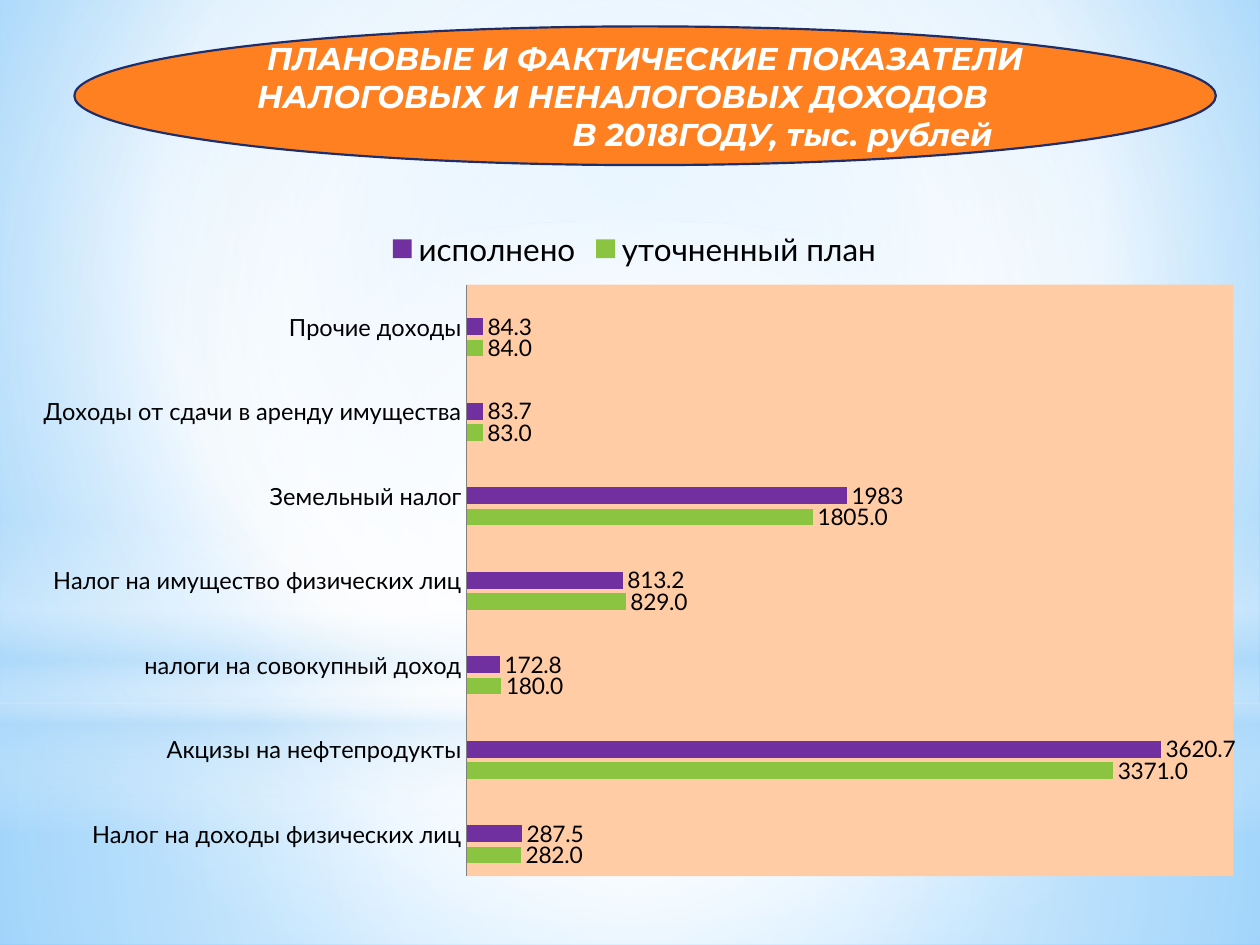
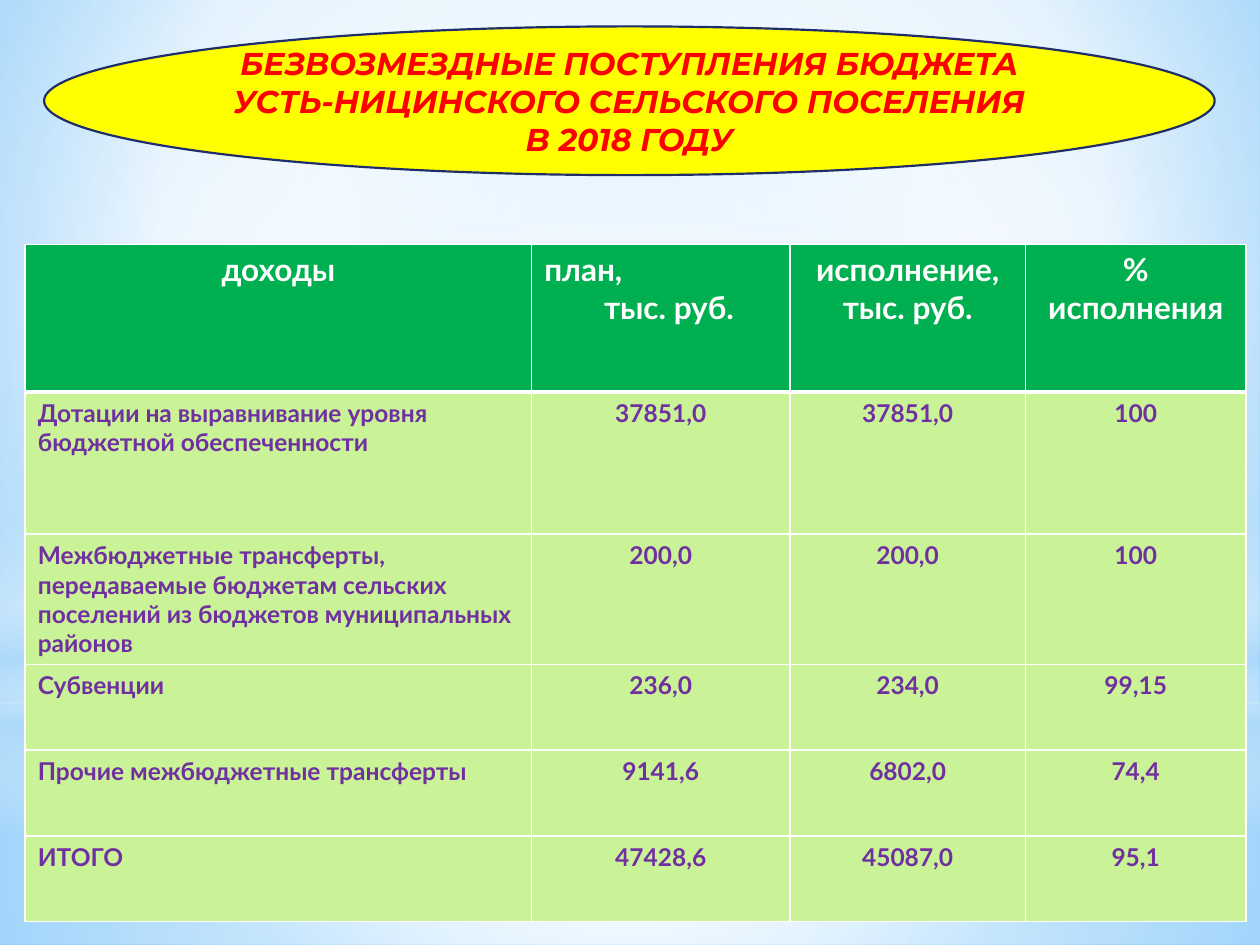
from lxml.etree import SubElement
from pptx import Presentation
from pptx.chart.data import CategoryChartData
from pptx.dml.color import RGBColor
from pptx.enum.chart import XL_CHART_TYPE, XL_LABEL_POSITION, XL_LEGEND_POSITION, XL_TICK_MARK
from pptx.enum.shapes import MSO_SHAPE
from pptx.enum.text import MSO_ANCHOR, MSO_AUTO_SIZE, PP_ALIGN
from pptx.oxml import parse_xml
from pptx.oxml.ns import nsdecls, qn
from pptx.util import Inches, Pt

WIDE, HIGH = Inches(10), Inches(7.5)
WHITE, NAVY, VIOLET, LIME = "FFFFFF", "1F2E69", "7030A0", "8AC441"
SKY = "B4DCFA"
HEAD = {"name": "Montserrat", "size": Pt(18), "bold": True, "italic": True}
CELL = {"name": "Lato", "size": Pt(14), "bold": True}
FLAT = {"margin_top": 0, "margin_bottom": 0, "word_wrap": True,
        "auto_size": MSO_AUTO_SIZE.NONE, "vertical_anchor": MSO_ANCHOR.MIDDLE}

CENTRE = (50, 50, 50, 50)
BACK = [(0, "9ED5FF", 100), (60, WHITE, 100), (100, "5BB9FF", 100)]
# Preset, box in percent of the slide, stops (place, colour, opacity), focus
GLOWS = [
    (MSO_SHAPE.RECTANGLE, (0, 74.4, 100, 25.6),
     [(0, WHITE, 91), (37, WHITE, 76), (100, SKY, 79)], CENTRE),
    (MSO_SHAPE.RECTANGLE, (0, 0, 100, 74.4),
     [(0, WHITE, 89), (48, WHITE, 62), (100, SKY, 79)], CENTRE),
    (MSO_SHAPE.RECTANGLE, (0, 54.93, 100, 33.33),
     [(0, WHITE, 0), (29, WHITE, 30), (45, SKY, 40), (55, WHITE, 26),
      (65, SKY, 60), (100, WHITE, 0)], None),
    (MSO_SHAPE.OVAL, (0, 23.33, 100, 74.4),
     [(0, WHITE, 100), (56, WHITE, 0)], CENTRE),
]

# Title lines: text, left indent, right indent in inches
INCOME = [("ПЛАНОВЫЕ И ФАКТИЧЕСКИЕ ПОКАЗАТЕЛИ", 0, 0),
          ("НАЛОГОВЫХ И НЕНАЛОГОВЫХ ДОХОДОВ", 0, 0.36),
          ("В 2018ГОДУ, тыс. рублей", 2.18, 0)]
GRANTS = [("БЕЗВОЗМЕЗДНЫЕ ПОСТУПЛЕНИЯ БЮДЖЕТА", 0, 0),
          ("УСТЬ-НИЦИНСКОГО СЕЛЬСКОГО ПОСЕЛЕНИЯ", 0, 0),
          ("В 2018 ГОДУ", 0, 0)]

TAXES = [("Налог на доходы физических лиц", 282, 287.5),
         ("Акцизы на нефтепродукты", 3371, 3620.7),
         ("налоги на совокупный доход", 180, 172.8),
         ("Налог на имущество физических лиц", 829, 813.2),
         ("Земельный налог", 1805, 1983),
         ("Доходы от сдачи в аренду имущества", 83, 83.7),
         ("Прочие доходы", 84, 84.3)]

COLS = (4.02, 2.05, 1.87, 1.75)
ROWS = (1.17, 1.13, 1.02, 0.68, 0.68, 0.68)
CELLS = [
    ("доходы", "план,\nтыс. руб.", "исполнение, тыс. руб.", "% исполнения"),
    ("Дотации на выравнивание уровня бюджетной обеспеченности", "37851,0", "37851,0", "100"),
    ("Межбюджетные трансферты, передаваемые бюджетам сельских поселений "
     "из бюджетов муниципальных районов", "200,0", "200,0", "100"),
    ("Субвенции", "236,0", "234,0", "99,15"),
    ("Прочие межбюджетные трансферты", "9141,6", "6802,0", "74,4"),
    ("ИТОГО", "47428,6", "45087,0", "95,1"),
]


def rgb(code):
    return RGBColor.from_string(code)


def share(x, y, w, h):
    """Turn percents of the slide into lengths."""
    return [int(part * full / 100) for part, full in zip((x, y, w, h), (WIDE, HIGH) * 2)]


def style(obj, form, color=None):
    for key, value in form.items():
        setattr(obj, key, value)
    if color:
        obj.color.rgb = rgb(color)


def blend(fill, root, stops, focus):
    """Fill with a gradient: round about the focus, or downward without one."""
    fill.solid()
    marks = "".join(
        f'<a:gs pos="{pos * 1000}"><a:srgbClr val="{color}">'
        f'<a:alpha val="{alpha * 1000}"/></a:srgbClr></a:gs>' for pos, color, alpha in stops)
    if focus:
        sides = " ".join(f'{side}="{part * 1000}"' for side, part in zip("ltrb", focus))
        way = f'<a:path path="circle"><a:fillToRect {sides}/></a:path>'
    else:
        way = '<a:lin ang="5400000" scaled="0"/>'
    old = root.find(".//" + qn("a:solidFill"))
    old.getparent().replace(old, parse_xml(
        f'<a:gradFill {nsdecls("a")} rotWithShape="1"><a:gsLst>{marks}</a:gsLst>{way}</a:gradFill>'))


def dress(master, slide):
    """Give the master its background and glows, drawn by way of a slide."""
    blend(master.background.fill, master.element.find(".//" + qn("p:bg")), BACK, (20, 10, 20, 60))
    for num, (kind, box, stops, focus) in enumerate(GLOWS):
        glow = slide.shapes.add_shape(kind, *share(*box))
        glow.shadow.inherit = False
        glow.line.fill.background()
        blend(glow.fill, glow.element.spPr, stops, focus)
        glow.element.nvSpPr.cNvPr.set("id", str(100 + num))
        master.shapes.element.insert(2 + num, glow.element)


def banner(slide, box, lines, back, color):
    """Lay the title over an oval that fills the same box."""
    oval = slide.shapes.add_shape(MSO_SHAPE.OVAL, *box)
    oval.shadow.inherit = False
    oval.fill.solid()
    oval.fill.fore_color.rgb = rgb(back)
    oval.line.color.rgb = rgb(NAVY)
    oval.line.width = Pt(1.25)
    title = slide.shapes.title
    style(title, dict(zip(("left", "top", "width", "height"), box)))
    slide.shapes.element.append(title.element)
    frame = title.text_frame
    side = int(box[2] * 0.1)
    style(frame, {**FLAT, "margin_left": side, "margin_right": side})
    frame.text = "\n".join(text for text, left, right in lines)
    for para, (text, left, right) in zip(frame.paragraphs, lines):
        style(para, {"alignment": PP_ALIGN.CENTER, "space_before": 0, "line_spacing": 1.0})
        style(para.runs[0].font, HEAD, color)
        form = para._p.get_or_add_pPr()
        form.set("marL", str(Inches(left)))
        form.set("marR", str(Inches(right)))


def bars(slide, box):
    data = CategoryChartData()
    data.categories = [name for name, plan, fact in TAXES]
    data.add_series("уточненный план", [plan for name, plan, fact in TAXES], "0.0")
    data.add_series("исполнено", [fact for name, plan, fact in TAXES])
    data.add_series("уточненный план", [None] * len(TAXES))
    chart = slide.shapes.add_chart(XL_CHART_TYPE.BAR_CLUSTERED, *box, data).chart
    chart.has_title = False
    style(chart.font, {"name": "Lato", "size": Pt(18)}, "000000")
    plot = chart.plots[0]
    style(plot, {"gap_width": 150, "overlap": -25, "vary_by_categories": False})
    for row, color, form in zip(plot.series, (LIME, VIOLET, LIME), ("0.0", "General", None)):
        row.format.fill.solid()
        row.format.fill.fore_color.rgb = rgb(color)
        if form:
            style(row.data_labels, {"show_value": True, "number_format": form,
                                    "number_format_is_linked": False,
                                    "position": XL_LABEL_POSITION.OUTSIDE_END})
            style(row.data_labels.font, {"name": "Lato", "size": Pt(13)}, "000000")
    axis = chart.category_axis
    axis.major_tick_mark = XL_TICK_MARK.NONE
    axis.format.line.color.rgb = rgb("808080")
    style(axis.tick_labels.font, {"name": "Lato", "size": Pt(13.5)}, "000000")
    style(chart.value_axis, {"visible": False, "has_major_gridlines": False,
                             "minimum_scale": 0, "maximum_scale": 4000})
    key(chart)
    field(chart)


def key(chart):
    """Put the legend on top, without the first series."""
    chart.has_legend = True
    style(chart.legend, {"position": XL_LEGEND_POSITION.TOP, "include_in_layout": False})
    style(chart.legend.font, {"name": "Lato", "size": Pt(18)}, "000000")
    chart.legend._element.insert(1, parse_xml(
        f'<c:legendEntry {nsdecls("c")}><c:idx val="0"/><c:delete val="1"/></c:legendEntry>'))


def field(chart):
    """Place and colour the plot area."""
    area = chart._chartSpace.find(".//" + qn("c:plotArea"))
    for old in area.findall(qn("c:layout")):
        area.remove(old)
    spots = [("layoutTarget", "inner"), ("xMode", "edge"), ("yMode", "edge"),
             ("x", 0.36), ("y", 0.1), ("w", 0.64), ("h", 0.84)]
    marks = "".join(f'<c:{tag} val="{value}"/>' for tag, value in spots)
    area.insert(0, parse_xml(
        f'<c:layout {nsdecls("c")}><c:manualLayout>{marks}</c:manualLayout></c:layout>'))
    area.append(parse_xml(
        f'<c:spPr {nsdecls("c", "a")}><a:solidFill><a:srgbClr val="FFCCA6"/></a:solidFill></c:spPr>'))


def edge(cell, widths):
    """Draw white borders: left, right, top, bottom, in points."""
    form = cell._tc.get_or_add_tcPr()
    for num, (side, width) in enumerate(zip("LRTB", widths)):
        line = SubElement(form, qn("a:ln" + side), w=str(Pt(width)))
        SubElement(SubElement(line, qn("a:solidFill")), qn("a:srgbClr"), val=WHITE)
        form.insert(num, line)


def grid(slide, box):
    table = slide.shapes.add_table(len(ROWS), len(COLS), *box).table
    table.horz_banding = False
    for col, part in zip(table.columns, COLS):
        col.width = int(box[2] * part / sum(COLS))
    for row, part in zip(table.rows, ROWS):
        row.height = int(box[3] * part / sum(ROWS))
    for r, texts in enumerate(CELLS):
        for c, text in enumerate(texts):
            cell = table.cell(r, c)
            cell.text = text
            cell.fill.solid()
            cell.fill.fore_color.rgb = rgb("CAF297" if r else "00B050")
            edge(cell, (1, 1, 3 if r == 1 else 1, 1 if r else 3))
            for para in cell.text_frame.paragraphs:
                para.alignment = PP_ALIGN.LEFT if r and not c else PP_ALIGN.CENTER
                style(para.runs[0].font, CELL, VIOLET if r else WHITE)
                if not r:
                    para.runs[0].font.size = Pt(18)
    first, second = table.cell(0, 1).text_frame.paragraphs
    first.alignment = PP_ALIGN.LEFT
    second._p.get_or_add_pPr().set("marL", str(Inches(0.13)))


def main():
    deck = Presentation()
    deck.slide_width, deck.slide_height = WIDE, HIGH
    plain = deck.slide_layouts[5]
    income, grants = [deck.slides.add_slide(plain) for _ in range(2)]
    dress(deck.slide_master, income)
    bars(income, share(2.8, 22.67, 95.3, 74.53))
    banner(income, share(5.9, 2.8, 90.6, 14.67), INCOME, "FF8021", WHITE)
    grid(grants, share(2, 25.87, 96.9, 71.47))
    banner(grants, share(3.5, 2.8, 92.9, 15.73), GRANTS, "FFFF00", "FF0000")
    deck.save("out.pptx")


if __name__ == "__main__":
    main()
